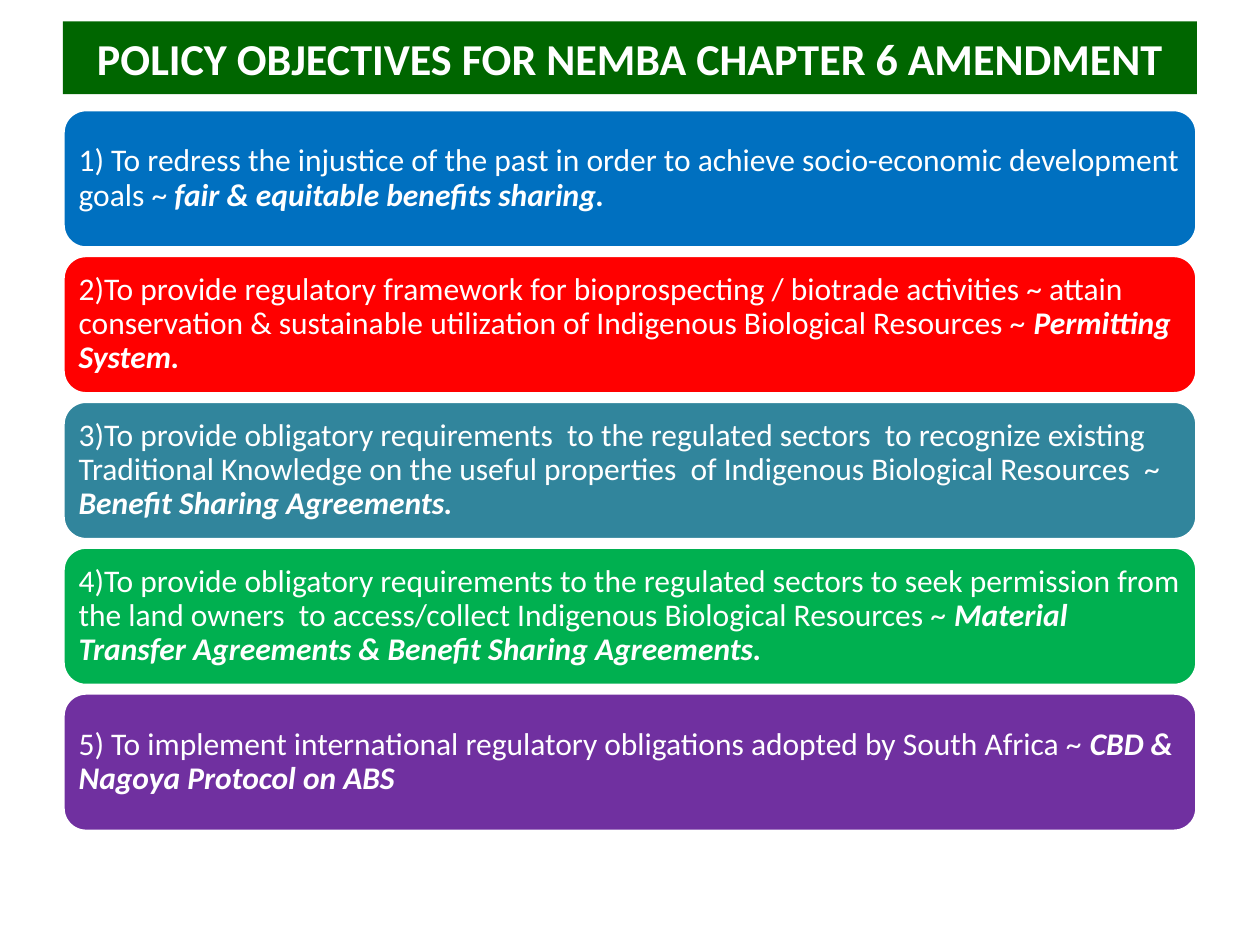
"""Build the slide of policy objectives for the NEMBA Chapter 6 amendment."""
from dataclasses import dataclass

import pptx
import pptx.dml.color
import pptx.enum.shapes
import pptx.enum.text
import pptx.util

Cm = pptx.util.Cm
Pt = pptx.util.Pt
MSO_SHAPE = pptx.enum.shapes.MSO_SHAPE
PP_ALIGN = pptx.enum.text.PP_ALIGN


@dataclass(frozen=True)
class Theme:
    font: str = "Calibri"
    text: str = "FFFFFF"
    outline: str = "FFFFFF"
    banner: str = "006600"
    bars: tuple = ("0070C0", "FF0000", "31859C", "00B050", "7030A0")
    title_size: float = 25.2
    body_size: float = 18


THEME = Theme()
LEFT, WIDTH = 1.27, 22.86
BAR_TOP, BAR_HEIGHT, BAR_PITCH = 2.21, 2.79, 2.94

TITLE = "POLICY OBJECTIVES FOR NEMBA CHAPTER 6 AMENDMENT"
OBJECTIVES = [
    ("1) To redress the injustice of the past in order to achieve "
     "socio-economic development goals ~ ",
     "fair & equitable benefits sharing."),
    ("2)To provide regulatory framework for bioprospecting / biotrade "
     "activities ~ attain conservation & sustainable utilization of "
     "Indigenous Biological Resources ~ ",
     "Permitting System."),
    ("3)To provide obligatory requirements  to the regulated sectors  to "
     "recognize existing Traditional Knowledge on the useful properties  of "
     "Indigenous Biological Resources  ~ ",
     "Benefit Sharing Agreements."),
    ("4)To provide obligatory requirements to the regulated sectors to seek "
     "permission from the land owners  to access/collect Indigenous "
     "Biological Resources ~ ",
     "Material Transfer Agreements & Benefit Sharing Agreements."),
    ("5) To implement international regulatory obligations adopted by South "
     "Africa ~ ",
     "CBD & Nagoya Protocol on ABS"),
]


def rgb(value):
    return pptx.dml.color.RGBColor.from_string(value)


def add_run(p, text, *, size, bold=False, italic=False):
    r = p.add_run()
    r.text = text
    r.font.name = THEME.font
    r.font.size = Pt(size)
    r.font.bold = bold
    r.font.italic = italic
    r.font.color.rgb = rgb(THEME.text)


def add_panel(s, kind, top, height, fill, *, align, inset):
    sp = s.shapes.add_shape(kind, Cm(LEFT), Cm(top), Cm(WIDTH), Cm(height))
    sp.shadow.inherit = False
    sp.fill.solid()
    sp.fill.fore_color.rgb = rgb(fill)
    tf = sp.text_frame
    tf.word_wrap = True
    tf.vertical_anchor = pptx.enum.text.MSO_ANCHOR.MIDDLE
    tf.margin_left = tf.margin_right = Cm(inset)
    tf.margin_top = tf.margin_bottom = Cm(inset)
    tf.paragraphs[0].alignment = align
    return sp


def add_title(s):
    sp = add_panel(s, MSO_SHAPE.RECTANGLE, 0.43, 1.47, THEME.banner,
                   align=PP_ALIGN.CENTER, inset=0.13)
    sp.line.fill.background()
    add_run(sp.text_frame.paragraphs[0], TITLE, size=THEME.title_size, bold=True)


def add_objective(s, top, fill, aim, outcome):
    sp = add_panel(s, MSO_SHAPE.ROUNDED_RECTANGLE, top, BAR_HEIGHT, fill,
                   align=PP_ALIGN.LEFT, inset=0.18)
    sp.line.color.rgb = rgb(THEME.outline)
    sp.line.width = Pt(2)
    p = sp.text_frame.paragraphs[0]
    p.line_spacing = 0.9
    add_run(p, aim, size=THEME.body_size)
    add_run(p, outcome, size=THEME.body_size, bold=True, italic=True)


def main():
    prs = pptx.Presentation()
    prs.slide_width, prs.slide_height = Cm(25.4), Cm(19.05)
    s = prs.slides.add_slide(prs.slide_layouts[6])
    add_title(s)
    for i, (fill, (aim, outcome)) in enumerate(zip(THEME.bars, OBJECTIVES)):
        add_objective(s, BAR_TOP + i * BAR_PITCH, fill, aim, outcome)
    prs.save("out.pptx")


if __name__ == "__main__":
    main()
